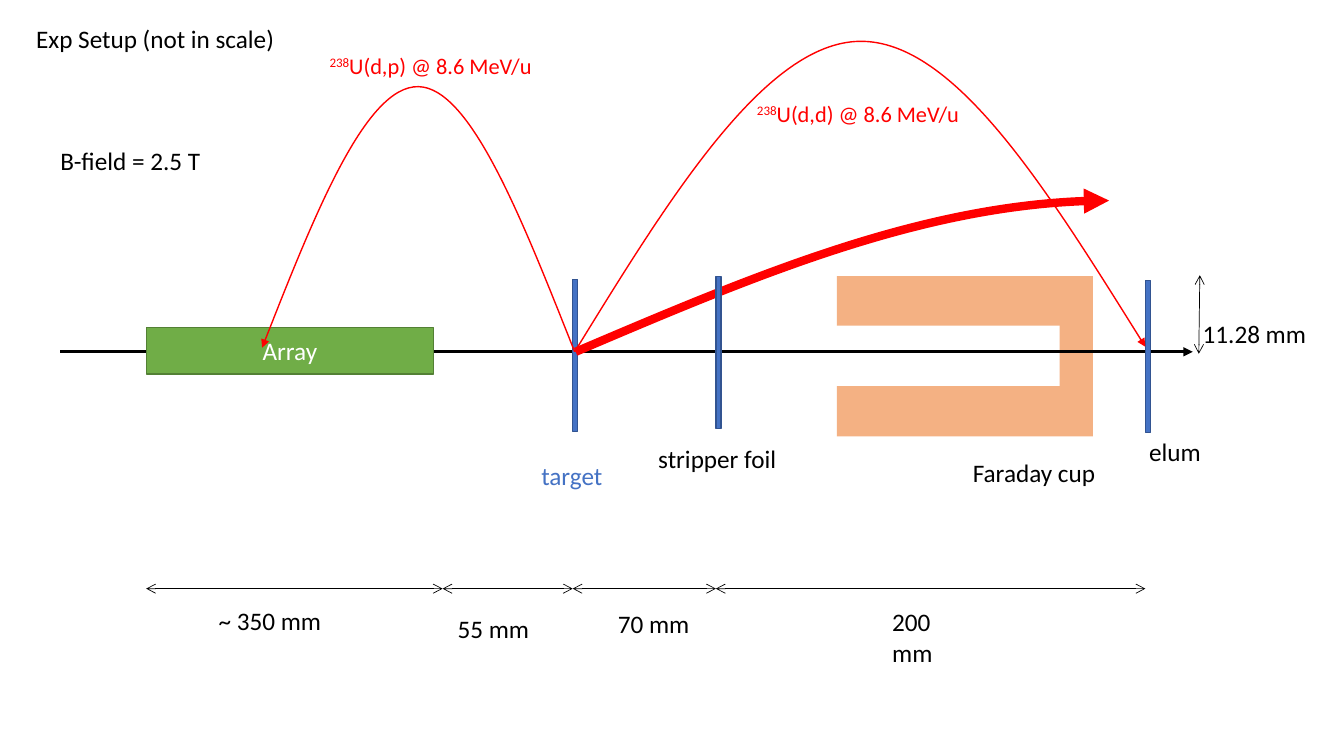
"""Draw the experimental setup slide: array, target, foils, beam paths and distances."""
from lxml.etree import SubElement
from pptx import Presentation
from pptx.dml.color import RGBColor
from pptx.enum.shapes import MSO_CONNECTOR, MSO_SHAPE
from pptx.enum.text import MSO_ANCHOR, MSO_AUTO_SIZE, PP_ALIGN
from pptx.oxml.ns import qn
from pptx.util import Pt

PX = 9144
THEME = {
    "black": RGBColor.from_string("000000"),
    "white": RGBColor.from_string("FFFFFF"),
    "red": RGBColor.from_string("FF0000"),
    "blue": RGBColor.from_string("4472C4"),
    "blue_edge": RGBColor.from_string("325491"),
    "green": RGBColor.from_string("70AD47"),
    "green_edge": RGBColor.from_string("538035"),
    "orange": RGBColor.from_string("F4B183"),
    "font": "Calibri",
    "body": Pt(18),
    "reaction": Pt(16),
}


def write(shape, runs, color, size, **frame_format):
    """Fill the shape's text frame with (text, baseline) runs."""
    frame = shape.text_frame
    for name, value in frame_format.items():
        setattr(frame, name, value)
    for text, baseline in runs:
        run = frame.paragraphs[0].add_run()
        run.text = text
        for name, value in {"name": THEME["font"], "size": THEME[size]}.items():
            setattr(run.font, name, value)
        run.font.color.rgb = THEME[color]
        if baseline:
            run._r.get_or_add_rPr().set("baseline", str(baseline))


def style_line(shape, color, width, **ends):
    """Set colour, width and arrowheads of an outline."""
    shape.line.color.rgb = THEME[color]
    shape.line.width = Pt(width)
    outline = shape._element.spPr.find(qn("a:ln"))
    for end, kind in ends.items():
        SubElement(outline, qn(f"a:{end}"), type=kind)


presentation = Presentation()
presentation.slide_width = 1333 * PX
presentation.slide_height = 750 * PX
slide = presentation.slides.add_slide(presentation.slide_layouts[6])

boxes = {
    "cup": (830, 274, 254, 159, "orange", None),
    "cup opening": (814, 323, 237, 60, "white", None),
    "array": (145, 325, 285, 46, "green", "green_edge"),
    "target": (568, 277, 5, 151, "blue", "blue_edge"),
    "elum": (1136, 278, 5, 151, "blue", "blue_edge"),
    "stripper foil": (710, 274, 5, 151, "blue", "blue_edge"),
}
curves = [
    ([(570, 349), (518, 218), (467, 87), (415, 86), (363, 85), (311, 215), (260, 345)], 1),
    ([(571, 349), (747, 274), (924, 199), (1100, 199)], 6),
    ([(570, 349), (664, 196), (759, 42), (853, 41), (947, 40), (1041, 192), (1136, 344)], 1),
]
both_ends = {"headEnd": "arrow", "tailEnd": "arrow"}
stations = [(145, 584), (439, 584), (568, 584), (710, 584), (1136, 584)]
lines = [((60, 349), (1183, 349), 2.25, {"tailEnd": "triangle"})]
lines += [(start, end, 0.5, both_ends) for start, end in zip(stations, stations[1:])]
lines.append(((1190, 273), (1189, 351), 0.5, both_ends))

labels = [
    ("Exp Setup (not in scale)", 26, 18, 434, True, "black"),
    ("B-field = 2.5 T", 50, 139, 237, True, "black"),
    ("target", 527, 452, 81, False, "blue"),
    ("stripper foil", 643, 435, 146, True, "black"),
    ("Faraday cup", 955, 449, 146, True, "black"),
    ("elum", 1130, 428, 146, True, "black"),
    ("~ 350 mm", 207, 596, 123, False, "black"),
    ("55 mm", 444, 604, 92, False, "black"),
    ("70 mm", 603, 599, 92, False, "black"),
    ("200 mm", 875, 597, 92, True, "black"),
    ("11.28 mm", 1183, 311, 124, False, "black"),
]
reactions = [("U(d,p) @ 8.6 MeV/u", 317, 47), ("U(d,d) @ 8.6 MeV/u", 741, 94)]

shapes = {}
for name, (left, top, width, height, fill, edge) in boxes.items():
    if name == "array":
        for start, end, weight, ends in lines:
            connector = slide.shapes.add_connector(
                MSO_CONNECTOR.STRAIGHT, *(value * PX for value in start + end)
            )
            style_line(connector, "black", weight, **ends)
            SubElement(connector._element.spPr, qn("a:effectLst"))
    if name == "stripper foil":
        for points, weight in curves:
            builder = slide.shapes.build_freeform(*points[0], scale=PX)
            builder.add_line_segments(points[1:], close=False)
            curve = builder.convert_to_shape()
            curve.shadow.inherit = False
            curve.fill.background()
            style_line(curve, "red", weight, tailEnd="triangle")
            outline = next(curve._element.iter(qn("a:path")))
            for index, segment in enumerate(outline.findall(qn("a:lnTo"))):
                if index % 3 == 0:
                    bezier = SubElement(outline, qn("a:cubicBezTo"))
                bezier.append(segment[0])
                outline.remove(segment)
    shape = slide.shapes.add_shape(
        MSO_SHAPE.RECTANGLE, *(value * PX for value in (left, top, width, height))
    )
    shape.shadow.inherit = False
    shape.fill.solid()
    shape.fill.fore_color.rgb = THEME[fill]
    if edge:
        style_line(shape, edge, 1)
    else:
        shape.line.fill.background()
    shapes[name] = shape

write(shapes["array"], [("Array", 0)], "white", "body", vertical_anchor=MSO_ANCHOR.MIDDLE)
shapes["array"].text_frame.paragraphs[0].alignment = PP_ALIGN.CENTER

texts = [([(text, 0)], *place, 40, wrap, color, "body") for text, *place, wrap, color in labels]
texts += [
    ([("238", 30000), (text, 0)], left, top, 226, 37, False, "red", "reaction")
    for text, left, top in reactions
]
for runs, left, top, width, height, wrap, color, size in texts:
    box = slide.shapes.add_textbox(*(value * PX for value in (left, top, width, height)))
    write(box, runs, color, size, word_wrap=wrap, auto_size=MSO_AUTO_SIZE.SHAPE_TO_FIT_TEXT)

presentation.save("out.pptx")
